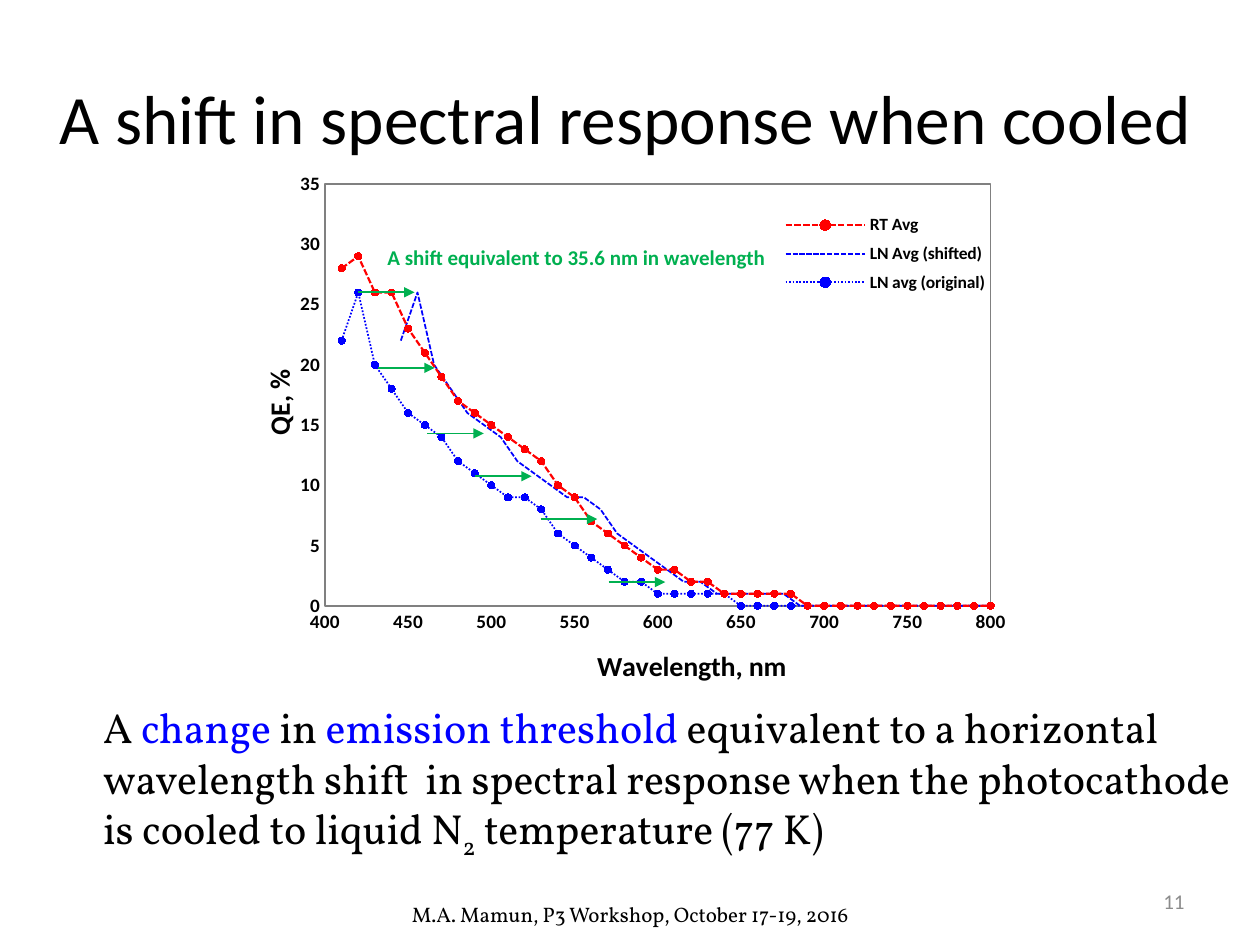
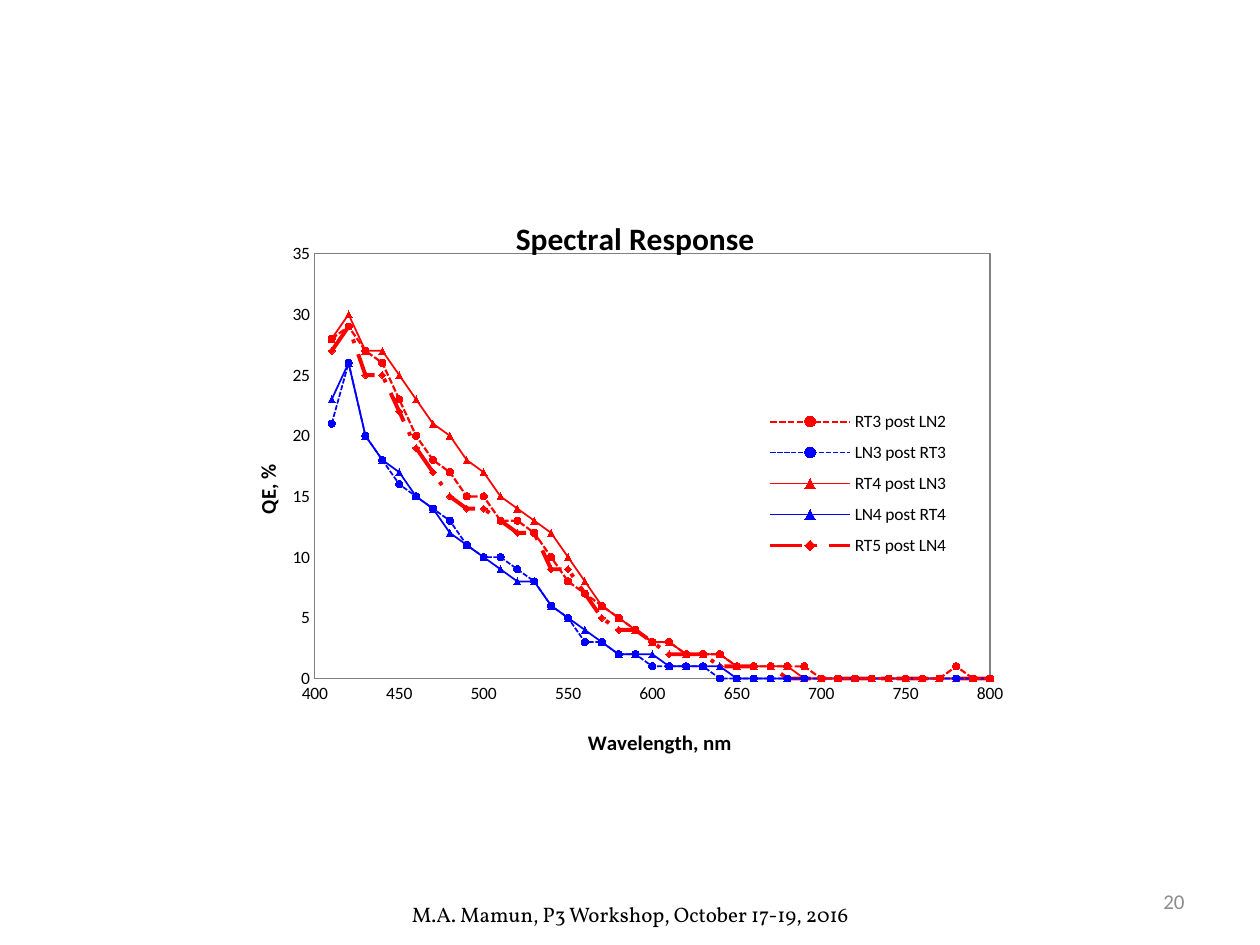
"""Build two slides on the spectral response of a cooled photocathode."""
from lxml import etree
from pptx import Presentation
from pptx import util as u
from pptx.chart.data import XyChartData
from pptx.dml.color import RGBColor
from pptx.enum import chart as ch, dml, shapes, text
from pptx.oxml import parse_xml
from pptx.oxml.ns import nsdecls, qn

COLORS = {"black": "000000", "blue": "0000FF", "red": "FF0000", "green": "00B050",
          "gray": "8C8C8C", "frame": "808080", "cream": "FDEADA", "peach": "FCD5B5",
          "sky": "66CCFF", "aqua": "33CCFF"}
DASH = dml.MSO_LINE.SQUARE_DOT
DOT = dml.MSO_LINE.ROUND_DOT
LONG_DASH_DOT = dml.MSO_LINE.LONG_DASH_DOT
CIRCLE = ch.XL_MARKER_STYLE.CIRCLE
TRIANGLE = ch.XL_MARKER_STYLE.TRIANGLE
DIAMOND = ch.XL_MARKER_STYLE.DIAMOND


def write(p, words, size=12, font="Calibri", color="black", bold=False, base=0):
    r = p.add_run()
    r.text = words
    r.font.size = u.Pt(size)
    r.font.name = font
    r.font.bold = bold
    r.font.color.rgb = RGBColor.from_string(COLORS[color])
    if base:
        r.font._element.set("baseline", str(base * 1000))


def add_box(s, at, align=text.PP_ALIGN.LEFT, anchor=text.MSO_ANCHOR.TOP, wrap=True):
    sp = s.shapes.add_textbox(*map(u.Inches, at))
    tf = sp.text_frame
    tf.word_wrap = wrap
    tf.vertical_anchor = anchor
    tf.paragraphs[0].alignment = align
    return sp


prs = Presentation()
prs.slide_width, prs.slide_height = u.Inches(10), u.Inches(7.5)
shift = prs.slides.add_slide(prs.slide_layouts[5])
response = prs.slides.add_slide(prs.slide_layouts[6])

footer = add_box(shift, (3.17, 7.11, 3.83, 0.3))
write(footer.text_frame.paragraphs[0], "M.A. Mamun, P3 Workshop, October 17-19, 2016",
      font="Vollkorn")
prs.slide_master.shapes.element.append(footer.element)

title = shift.shapes.title
title.left, title.top, title.width, title.height = map(u.Inches, (0.3, 0.3, 9.33, 1.25))
tf = title.text_frame
tf.auto_size = text.MSO_AUTO_SIZE.NONE
tf.vertical_anchor = text.MSO_ANCHOR.MIDDLE
tf.paragraphs[0].alignment = text.PP_ALIGN.CENTER
write(tf.paragraphs[0], "A shift in spectral response when cooled", size=39.6)

conclusion = [
    [("A ", {}), ("change", {"color": "blue"}), (" in ", {}),
     ("emission threshold ", {"color": "blue"}), ("equivalent to a horizontal", {})],
    [("wavelength shift  in spectral response when the photocathode", {})],
    [("is cooled to liquid N", {}), ("2", {"base": -25}), (" temperature (77 K)", {})],
]
tf = add_box(shift, (0.72, 5.52, 9.49, 1.31), wrap=False).text_frame
for i, line in enumerate(conclusion):
    p = tf.add_paragraph() if i else tf.paragraphs[0]
    for words, fmt in line:
        write(p, words, size=24, font="Vollkorn", **fmt)

SHIFT_NM = 35.6
wavelengths = range(410, 840, 10)
ln_avg = [22, 26, 20, 18, 16, 15, 14, 12, 11, 10, 9, 9, 8, 6, 5, 4, 3, 2, 2,
          1, 1, 1, 1, 1] + [0] * 19
charts = [
    dict(slide=shift, at=(1.9, 0.9, 6.29, 4.6), title=None, axis_size=16,
         tick_size=11, bold=True, legend=(0.655, 0.163, 0.32, 0.167),
         x_title=(0.445, 0.93), y_title=(0.02, 0.443),
         series=[
             ("RT Avg", 0, "red", 1.25, DASH, CIRCLE, "cream",
              [28, 29, 26, 26, 23, 21, 19, 17, 16, 15, 14, 13, 12, 10, 9, 7, 6, 5, 4,
               3, 3, 2, 2] + [1] * 5 + [0] * 12 + [1, 0, 0]),
             ("LN Avg (shifted)", SHIFT_NM, "blue", 1, DASH, None, None, ln_avg),
             ("LN avg (original)", 0, "blue", 1, DOT, CIRCLE, None, ln_avg),
         ]),
    dict(slide=response, at=(1.81, 1.45, 6.38, 4.6), title="Spectral Response",
         axis_size=12, tick_size=10, bold=False, legend=(0.644, 0.38, 0.28, 0.29),
         x_title=(0.443, 0.946), y_title=(0.027, 0.485),
         series=[
             ("RT3 post LN2", 0, "red", 1.25, DASH, CIRCLE, "cream",
              [28, 29, 27, 26, 23, 20, 18, 17, 15, 15, 13, 13, 12, 10, 8, 7, 6, 5, 4,
               3, 3, 2, 2, 2] + [1] * 5 + [0] * 8 + [1, 0, 0, 1, 1, 1]),
             ("LN3 post RT3", 0, "blue", 1, DASH, CIRCLE, "sky",
              [21, 26, 20, 18, 16, 15, 14, 13, 11, 10, 10, 9, 8, 6, 5, 3, 3, 2, 2,
               1, 1, 1, 1] + [0] * 20),
             ("RT4 post LN3", 0, "red", 1, None, TRIANGLE, "peach",
              [28, 30, 27, 27, 25, 23, 21, 20, 18, 17, 15, 14, 13, 12, 10, 8, 6, 5, 4,
               3, 3, 2, 2, 2] + [1] * 4 + [0] * 15),
             ("LN4 post RT4", 0, "blue", 1, None, TRIANGLE, "aqua",
              [23, 26, 20, 18, 17, 15, 14, 12, 11, 10, 9, 8, 8, 6, 5, 4, 3, 2, 2, 2,
               1, 1, 1, 1] + [0] * 19),
             ("RT5 post LN4", 0, "red", 0, LONG_DASH_DOT, DIAMOND, "peach",
              [27, 29, 25, 25, 22, 19, 17, 15, 14, 14, 13, 12, 12, 9, 9, 7, 5, 4, 4,
               3, 2, 2, 2] + [1] * 4 + [0] * 16),
         ]),
]

for c in charts:
    data = XyChartData()
    for name, offset, *_, values in c["series"]:
        points = data.add_series(name)
        for x, y in zip(wavelengths, values):
            points.add_data_point(x + offset, y)
    chart = c["slide"].shapes.add_chart(
        ch.XL_CHART_TYPE.XY_SCATTER_LINES, *map(u.Inches, c["at"]), data).chart
    chart.font.size = u.Pt(10)
    chart.font.name = "Calibri"
    chart.font.color.rgb = RGBColor.from_string(COLORS["black"])
    plot = chart.plots[0]
    plot.vary_by_categories = False

    for ser, (_, _, color, width, dash, marker, fill, _) in zip(plot.series, c["series"]):
        rgb = RGBColor.from_string(COLORS[color])
        ser.smooth = False
        ser.format.line.color.rgb = rgb
        ser.format.line.width = u.Pt(width)
        if dash:
            ser.format.line.dash_style = dash
        ser.marker.style = marker or ch.XL_MARKER_STYLE.NONE
        if marker:
            ser.marker.size = 4
            ser.marker.format.line.color.rgb = rgb
            if fill:
                ser.marker.format.fill.solid()
                ser.marker.format.fill.fore_color.rgb = RGBColor.from_string(COLORS[fill])
            else:
                ser.marker.format.fill.background()

    for axis, label, low, high, step, fmt in (
            (chart.category_axis, "Wavelength, nm", 400, 800, 50, "General"),
            (chart.value_axis, "QE, %", 0, 35, 5, "0")):
        axis.minimum_scale, axis.maximum_scale, axis.major_unit = low, high, step
        axis.has_major_gridlines = False
        axis.major_tick_mark = axis.minor_tick_mark = ch.XL_TICK_MARK.NONE
        axis.tick_labels.number_format = fmt
        axis.tick_labels.number_format_is_linked = False
        axis.tick_labels.font.size = u.Pt(c["tick_size"])
        axis.tick_labels.font.bold = c["bold"]
        axis.format.line.color.rgb = RGBColor.from_string(COLORS["frame"])
        write(axis.axis_title.text_frame.paragraphs[0], label, size=c["axis_size"], bold=True)
    y_title = chart.value_axis.axis_title
    y_title.text_frame._txBody.find(qn("a:bodyPr")).set("rot", "-5400000")

    chart.has_legend = True
    chart.legend.position = ch.XL_LEGEND_POSITION.BOTTOM
    chart.legend.include_in_layout = False
    chart.legend.font.size = u.Pt(10)
    chart.legend.font.bold = c["bold"]

    area = chart._chartSpace.chart.plotArea
    area.append(parse_xml(
        f'<c:spPr {nsdecls("c", "a")}><a:noFill/><a:ln w="9525"><a:solidFill>'
        f'<a:srgbClr val="{COLORS["frame"]}"/></a:solidFill></a:ln></c:spPr>'))
    places = [(area, (0.108, 0.124, 0.84, 0.741)), (chart.legend._element, c["legend"]),
              (chart.category_axis.axis_title._element, c["x_title"]),
              (y_title._element, c["y_title"])]
    chart.has_title = bool(c["title"])
    if c["title"]:
        write(chart.chart_title.text_frame.paragraphs[0], c["title"], size=18, bold=True)
        places.append((chart.chart_title._element, (0.351, 0.05)))
    for part, place in places:
        for old in part.findall(qn("c:layout")):
            part.remove(old)
        layout = etree.Element(qn("c:layout"))
        manual = etree.SubElement(layout, qn("c:manualLayout"))
        settings = [("layoutTarget", "inner")] if part is area else []
        settings += [("xMode", "edge"), ("yMode", "edge"), *zip("xywh", place)]
        for tag, value in settings:
            etree.SubElement(manual, qn("c:" + tag)).set("val", str(value))
        if part is area:
            part.insert(0, layout)
        else:
            part.find(qn("c:overlay")).addprevious(layout)

note = add_box(shift, (2.83, 1.89, 3.49, 0.3), align=text.PP_ALIGN.CENTER)
write(note.text_frame.paragraphs[0], "A shift equivalent to 35.6 nm in wavelength",
      color="green", bold=True)

ARROW_LENGTH = 0.45
for x, y, width in ((2.84, 2.32, 1), (3, 2.92, 1), (3.39, 3.44, 1), (3.77, 3.78, 1),
                    (4.29, 4.12, 0.75), (4.83, 4.62, 0.75)):
    arrow = shift.shapes.add_connector(
        shapes.MSO_CONNECTOR.STRAIGHT, *map(u.Inches, (x, y, x + ARROW_LENGTH, y)))
    arrow.line.color.rgb = RGBColor.from_string(COLORS["green"])
    arrow.line.width = u.Pt(width)
    spPr = arrow.element.spPr
    etree.SubElement(spPr.find(qn("a:ln")), qn("a:tailEnd")).set("type", "triangle")
    etree.SubElement(spPr, qn("a:effectLst"))

for s, number in ((shift, "11"), (response, "20")):
    sp = add_box(s, (7.17, 6.95, 2.33, 0.4), align=text.PP_ALIGN.RIGHT,
                 anchor=text.MSO_ANCHOR.MIDDLE)
    write(sp.text_frame.paragraphs[0], number, color="gray")

prs.save("out.pptx")
